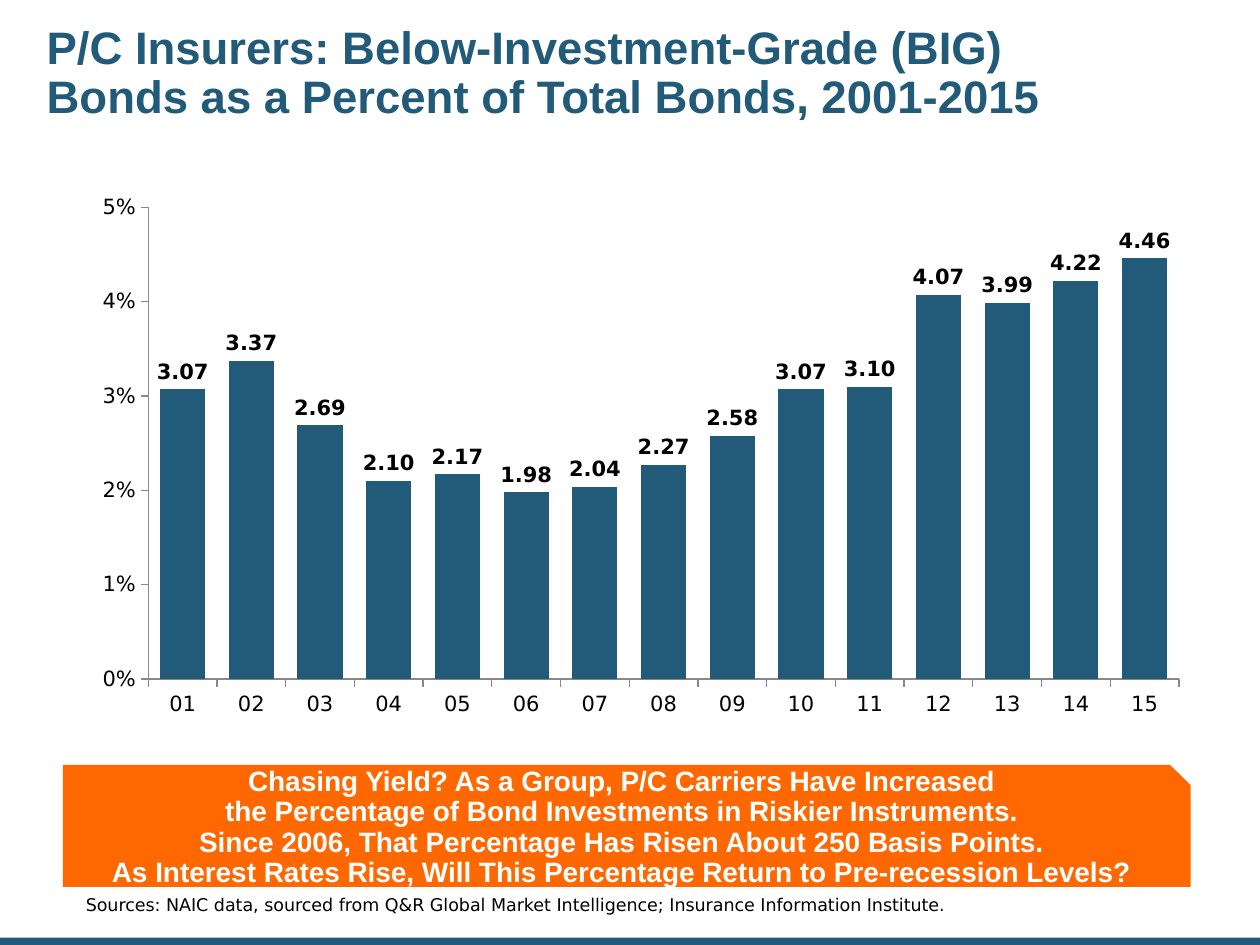
from dataclasses import dataclass

from lxml import etree
from pptx import Presentation
from pptx.chart.data import CategoryChartData
from pptx.dml.color import RGBColor
from pptx.enum.chart import XL_CHART_TYPE, XL_LABEL_POSITION, XL_TICK_MARK
from pptx.enum.shapes import MSO_SHAPE
from pptx.enum.text import MSO_ANCHOR, MSO_AUTO_SIZE, PP_ALIGN
from pptx.oxml.ns import qn
from pptx.util import Cm, Pt

COLUMNS = XL_CHART_TYPE.COLUMN_CLUSTERED
OUTSIDE_END = XL_LABEL_POSITION.OUTSIDE_END
TICK_OUT, TICK_NONE = XL_TICK_MARK.OUTSIDE, XL_TICK_MARK.NONE
RECT, SNIPPED = MSO_SHAPE.RECTANGLE, MSO_SHAPE.SNIP_1_RECTANGLE
MIDDLE, BOTTOM = MSO_ANCHOR.MIDDLE, MSO_ANCHOR.BOTTOM
LEFT, CENTER = PP_ALIGN.LEFT, PP_ALIGN.CENTER


@dataclass(frozen=True)
class Theme:
    blue: RGBColor = RGBColor(0x22, 0x5A, 0x7A)
    orange: RGBColor = RGBColor(0xFF, 0x68, 0x01)
    white: RGBColor = RGBColor(0xFF, 0xFF, 0xFF)
    black: RGBColor = RGBColor(0, 0, 0)
    axis: RGBColor = RGBColor(0x88, 0x88, 0x88)
    heading_font: str = "Arial"
    data_font: str = "DejaVu Sans"
    title_size: Pt = Pt(26)
    callout_size: Pt = Pt(16)
    chart_size: Pt = Pt(12)
    source_size: Pt = Pt(10)


@dataclass(frozen=True)
class Box:
    """Position and size in centimetres."""
    left: float
    top: float
    width: float
    height: float

    def lengths(self) -> tuple:
        return Cm(self.left), Cm(self.top), Cm(self.width), Cm(self.height)


@dataclass(frozen=True)
class TextStyle:
    font: str
    size: Pt
    color: RGBColor
    bold: bool = False
    align: PP_ALIGN = LEFT
    anchor: MSO_ANCHOR = MIDDLE
    insets: tuple = (0, 0, 0, 0)  # left, top, right, bottom in cm


THEME = Theme()
TITLE_STYLE = TextStyle(THEME.heading_font, THEME.title_size, THEME.blue, True,
                        insets=(0.13, 0.13, 0.13, 0.13))
CALLOUT_STYLE = TextStyle(THEME.heading_font, THEME.callout_size, THEME.white, True,
                          CENTER, insets=(0.25, 0.13, 0.25, 0.25))
SOURCE_STYLE = TextStyle(THEME.data_font, THEME.source_size, THEME.black, anchor=BOTTOM)

TITLE = ("P/C Insurers: Below-Investment-Grade (BIG)\n"
         "Bonds as a Percent of Total Bonds, 2001-2015")
CALLOUT = ("Chasing Yield? As a Group, P/C Carriers Have Increased\n"
           "the Percentage of Bond Investments in Riskier Instruments.\n"
           "Since 2006, That Percentage Has Risen About 250 Basis Points.\n"
           "As Interest Rates Rise, Will This Percentage Return to Pre-recession Levels?")
SOURCE = ("Sources: NAIC data, sourced from Q&R Global Market Intelligence; "
          "Insurance Information Institute.")
YEARS = [f"{year:02d}" for year in range(1, 16)]
BIG_SHARES = [3.07, 3.37, 2.69, 2.10, 2.17, 1.98, 2.04, 2.27,
              2.58, 3.07, 3.10, 4.07, 3.99, 4.22, 4.46]
PLOT = {"x": 0.094, "y": 0.069, "w": 0.896, "h": 0.746}


def write_text(shape, text: str, style: TextStyle) -> None:
    """Write one paragraph; newlines become line breaks."""
    tf = shape.text_frame
    tf.word_wrap = True
    tf.auto_size = MSO_AUTO_SIZE.NONE
    tf.vertical_anchor = style.anchor
    (tf.margin_left, tf.margin_top,
     tf.margin_right, tf.margin_bottom) = map(Cm, style.insets)
    p = tf.paragraphs[0]
    p.text = text
    p.alignment = style.align
    p.line_spacing = 0.9
    p.font.name, p.font.size = style.font, style.size
    p.font.bold = style.bold
    p.font.color.rgb = style.color


def add_panel(slide, kind: MSO_SHAPE, box: Box, fill: RGBColor):
    s = slide.shapes.add_shape(kind, *box.lengths())
    s.shadow.inherit = False
    s.fill.solid()
    s.fill.fore_color.rgb = fill
    s.line.fill.background()
    return s


def set_plot_layout(chart) -> None:
    """Fix the inner plot area as fractions of the chart frame."""
    area = chart._chartSpace.chart.plotArea
    layout = area.find(qn("c:layout"))
    if layout is None:
        layout = etree.Element(qn("c:layout"))
        area.insert(0, layout)
    manual = etree.SubElement(layout, qn("c:manualLayout"))
    settings = {"layoutTarget": "inner", "xMode": "edge", "yMode": "edge", **PLOT}
    for tag, value in settings.items():
        etree.SubElement(manual, qn(f"c:{tag}")).set("val", str(value))


def add_bond_chart(slide, box: Box) -> None:
    data = CategoryChartData(number_format="0.00")
    data.categories = YEARS
    data.add_series("BIG bonds (% of total)", BIG_SHARES)
    chart = slide.shapes.add_chart(COLUMNS, *box.lengths(), data).chart
    chart.has_legend = chart.has_title = False
    chart.font.name, chart.font.size = THEME.data_font, THEME.chart_size
    chart.font.color.rgb = THEME.black
    set_plot_layout(chart)

    # Axes
    for axis in (chart.category_axis, chart.value_axis):
        axis.has_major_gridlines = False
        axis.major_tick_mark, axis.minor_tick_mark = TICK_OUT, TICK_NONE
        axis.format.line.color.rgb = THEME.axis
        axis.format.line.width = Pt(0.75)
    value_axis = chart.value_axis
    value_axis.minimum_scale, value_axis.maximum_scale = 0, 5
    value_axis.major_unit = 1
    value_axis.tick_labels.number_format = '0"%"'
    value_axis.tick_labels.number_format_is_linked = False

    # Columns and their labels
    plot = chart.plots[0]
    plot.gap_width = 52
    plot.vary_by_categories = False
    fill = plot.series[0].format.fill
    fill.solid()
    fill.fore_color.rgb = THEME.blue
    plot.has_data_labels = True
    labels = plot.data_labels
    labels.show_value = True
    labels.position = OUTSIDE_END
    labels.number_format = "#,##0.00"
    labels.number_format_is_linked = False
    labels.font.name, labels.font.size = THEME.data_font, THEME.chart_size
    labels.font.bold = True
    labels.font.color.rgb = THEME.black


def main() -> None:
    prs = Presentation()
    prs.slide_width, prs.slide_height = Cm(25.4), Cm(19.05)
    slide = prs.slides.add_slide(prs.slide_layouts[5])

    # Title
    title = slide.shapes.title
    title.left, title.top, title.width, title.height = Box(0.81, 0.18, 23.5, 2.64).lengths()
    write_text(title, TITLE, TITLE_STYLE)

    # Footer bar and chart
    add_panel(slide, RECT, Box(0, 18.9, 25.4, 0.15), THEME.blue)
    add_bond_chart(slide, Box(0.81, 3.3, 23.19, 12.75))

    # Source line and callout
    source = slide.shapes.add_textbox(*Box(1.73, 17.32, 21.34, 1.14).lengths())
    write_text(source, SOURCE, SOURCE_STYLE)
    callout = add_panel(slide, SNIPPED, Box(1.27, 15.42, 22.73, 2.46), THEME.orange)
    write_text(callout, CALLOUT, CALLOUT_STYLE)

    prs.save("out.pptx")


if __name__ == "__main__":
    main()
